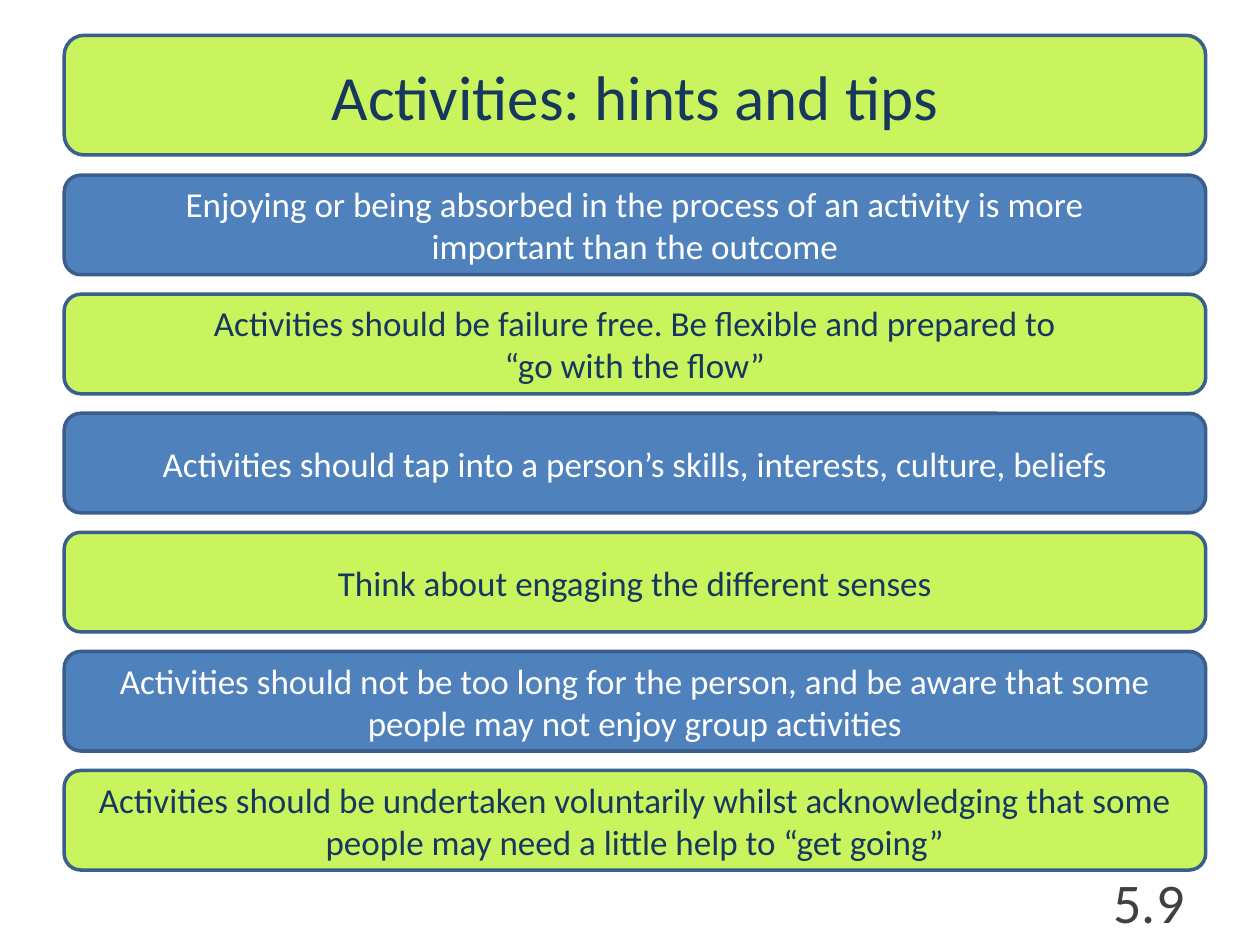
from dataclasses import dataclass
from typing import Any

from pptx import Presentation
from pptx import util as u
from pptx.dml.color import RGBColor
from pptx.enum import shapes, text

LIME, BLUE, NAVY, EDGE = "C9F45E", "4F81BD", "17375E", "3A5F8C"
WHITE, GREY = "FFFFFF", "404040"
LEFT, WIDTH = 0.51, 9.06
TOP, STEP, HIGH = 1.39, 0.945, 0.79


@dataclass
class Bar:
    lines: list[str]
    top: float
    high: float = HIGH
    fill: str = LIME
    ink: str = NAVY


def paint(item: Any, tone: str) -> None:
    item.solid()
    item.fore_color.rgb = RGBColor.from_string(tone)


def write(shape: Any, lines: list[str], size: int, ink: str, align: Any) -> None:
    frame = shape.text_frame
    form = {"word_wrap": True, "auto_size": text.MSO_AUTO_SIZE.NONE,
            "vertical_anchor": text.MSO_ANCHOR.MIDDLE}
    for key, value in form.items():
        setattr(frame, key, value)
    frame.text = "\n".join(lines)
    for para in frame.paragraphs:
        para.alignment = align
        for key, value in {"name": "Calibri", "size": u.Pt(size)}.items():
            setattr(para.font, key, value)
        paint(para.font.fill, ink)


def draw(slide: Any, bar: Bar) -> Any:
    shape = slide.shapes.add_shape(
        shapes.MSO_SHAPE.ROUNDED_RECTANGLE, u.Inches(LEFT), u.Inches(bar.top),
        u.Inches(WIDTH), u.Inches(bar.high))
    shape.shadow.inherit = False
    paint(shape.fill, bar.fill)
    paint(shape.line.fill, EDGE)
    shape.line.width = u.Pt(2)
    if bar.lines:
        write(shape, bar.lines, 20, bar.ink, text.PP_ALIGN.CENTER)
    return shape


def main() -> None:
    deck = Presentation()
    deck.slide_width, deck.slide_height = u.Inches(10), u.Inches(7.5)
    slide = deck.slides.add_slide(deck.slide_layouts[5])

    tips = [
        ["Enjoying or being absorbed in the process of an activity is more",
         "important than the outcome"],
        ["Activities should be failure free. Be flexible and prepared to",
         "“go with the flow”"],
        ["Activities should tap into a person’s skills, interests, culture, beliefs"],
        ["Think about engaging the different senses"],
        ["Activities should not be too long for the person, and be aware that "
         "some people may not enjoy group activities"],
        ["Activities should be undertaken voluntarily whilst acknowledging that "
         "some people may need a little help to “get going”"],
    ]
    tones = [(BLUE, WHITE), (LIME, NAVY)]
    for row, lines in enumerate(tips):
        draw(slide, Bar(lines, TOP + row * STEP, HIGH, *tones[row % 2]))

    panel = draw(slide, Bar([], 0.28, 0.95))
    title = slide.shapes.title
    for key in ("left", "top", "width", "height"):
        setattr(title, key, getattr(panel, key))
    write(title, ["Activities: hints and tips"], 36, NAVY, text.PP_ALIGN.CENTER)
    panel._element.addnext(title._element)

    page = slide.shapes.add_textbox(
        u.Inches(7.17), u.Inches(6.95), u.Inches(2.33), u.Inches(0.4))
    write(page, ["5.9"], 32, GREY, text.PP_ALIGN.RIGHT)
    deck.save("out.pptx")


if __name__ == "__main__":
    main()
